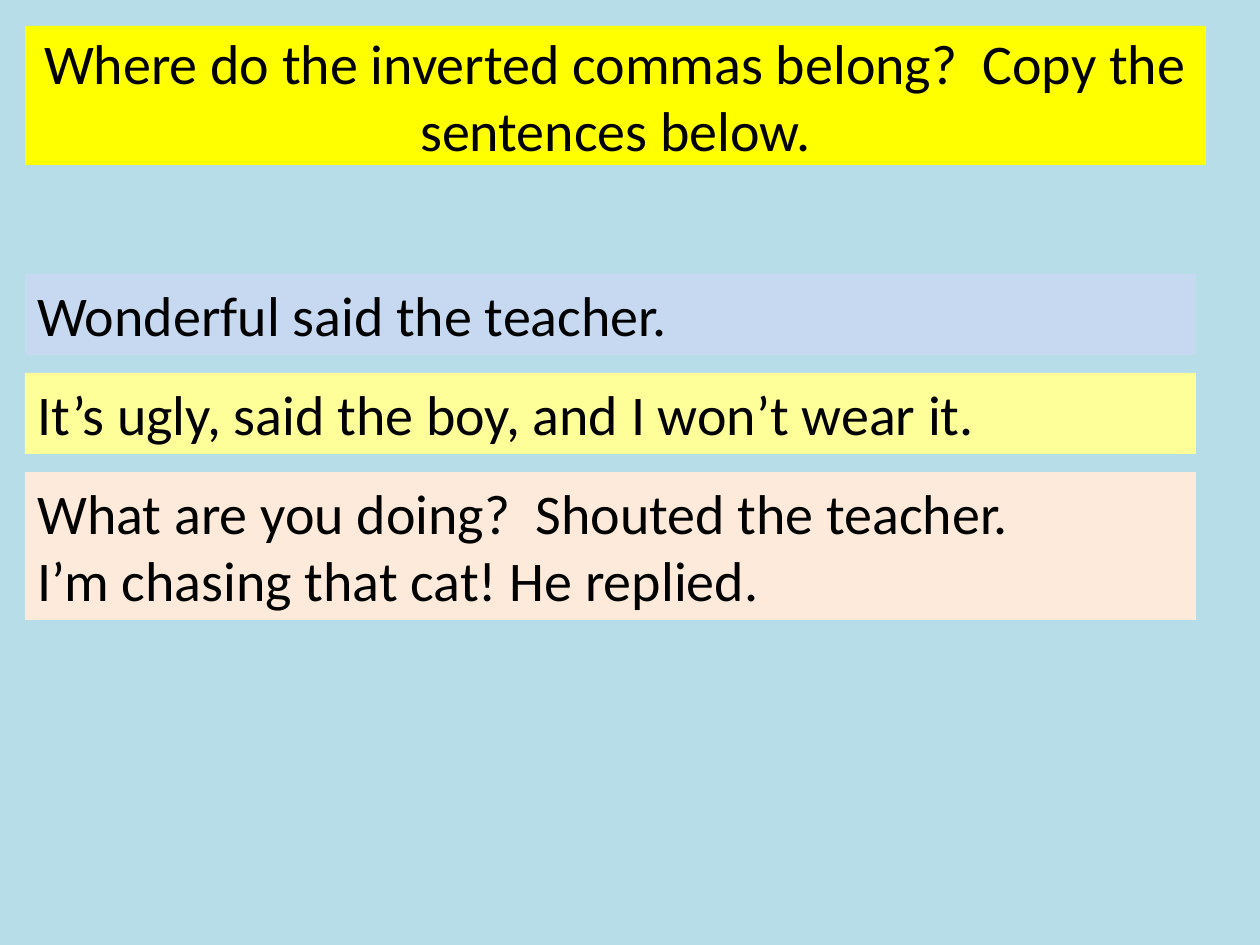
"""Build a slide asking pupils where inverted commas belong in three exercises."""
from typing import NamedTuple

from pptx import Presentation
from pptx.dml.color import RGBColor
from pptx.enum.text import MSO_ANCHOR, MSO_AUTO_SIZE, PP_ALIGN
from pptx.util import Emu, Pt

EMU_PER_PX = 914400 / 126
SLIDE_WIDTH, SLIDE_HEIGHT = 1260, 945
LEFT = 25
EXERCISE_TOP, EXERCISE_WIDTH, EXERCISE_GAP = 274, 1171, 18
COLOURS = {
    "background": "B7DEE8",
    "text": "000000",
    "instruction": "FFFF00",
    "blue": "C6D9F1",
    "yellow": "FFFF99",
    "peach": "FDEADA",
}


class Exercise(NamedTuple):
    sentences: tuple[str, ...]
    colour: str
    height: int


EXERCISES = (
    Exercise(("Wonderful said the teacher.",), "blue", 81),
    Exercise(("It’s ugly, said the boy, and I won’t wear it.",), "yellow", 81),
    Exercise(
        ("What are you doing?  Shouted the teacher.", "I’m chasing that cat! He replied."),
        "peach",
        148,
    ),
)


def px(length: int) -> Emu:
    """Convert whole pixels to EMU."""
    return Emu(round(length * EMU_PER_PX))


def paint(fill, colour: str) -> None:
    """Apply a solid named colour to a fill."""
    fill.solid()
    fill.fore_color.rgb = RGBColor.from_string(COLOURS[colour])


def write_lines(frame, lines: tuple[str, ...], alignment: PP_ALIGN) -> None:
    """Write each line as a paragraph in the slide's text style."""
    frame.word_wrap = True
    for index, line in enumerate(lines):
        paragraph = frame.add_paragraph() if index else frame.paragraphs[0]
        paragraph.alignment = alignment
        run = paragraph.add_run()
        run.text = line
        run.font.name = "Calibri"
        run.font.size = Pt(32)
        run.font.color.rgb = RGBColor.from_string(COLOURS["text"])


def add_instruction(slide) -> None:
    """Place and format the title as the instruction banner."""
    instruction = slide.shapes.title
    instruction.left, instruction.top = px(LEFT), px(26)
    instruction.width, instruction.height = px(1181), px(139)
    paint(instruction.fill, "instruction")
    frame = instruction.text_frame
    frame.auto_size = MSO_AUTO_SIZE.NONE
    frame.vertical_anchor = MSO_ANCHOR.MIDDLE
    write_lines(
        frame,
        ("Where do the inverted commas belong?  Copy the sentences below.",),
        PP_ALIGN.CENTER,
    )


def add_exercise(slide, exercise: Exercise, top: int) -> None:
    """Draw one coloured box of sentences."""
    box = slide.shapes.add_textbox(px(LEFT), px(top), px(EXERCISE_WIDTH), px(exercise.height))
    paint(box.fill, exercise.colour)
    box.text_frame.auto_size = MSO_AUTO_SIZE.SHAPE_TO_FIT_TEXT
    write_lines(box.text_frame, exercise.sentences, PP_ALIGN.LEFT)


def main() -> None:
    """Build and save the presentation."""
    presentation = Presentation()
    presentation.slide_width, presentation.slide_height = px(SLIDE_WIDTH), px(SLIDE_HEIGHT)
    slide = presentation.slides.add_slide(presentation.slide_layouts[5])
    paint(slide.background.fill, "background")
    add_instruction(slide)
    top = EXERCISE_TOP
    for exercise in EXERCISES:
        add_exercise(slide, exercise, top)
        top += exercise.height + EXERCISE_GAP
    presentation.save("out.pptx")


if __name__ == "__main__":
    main()
